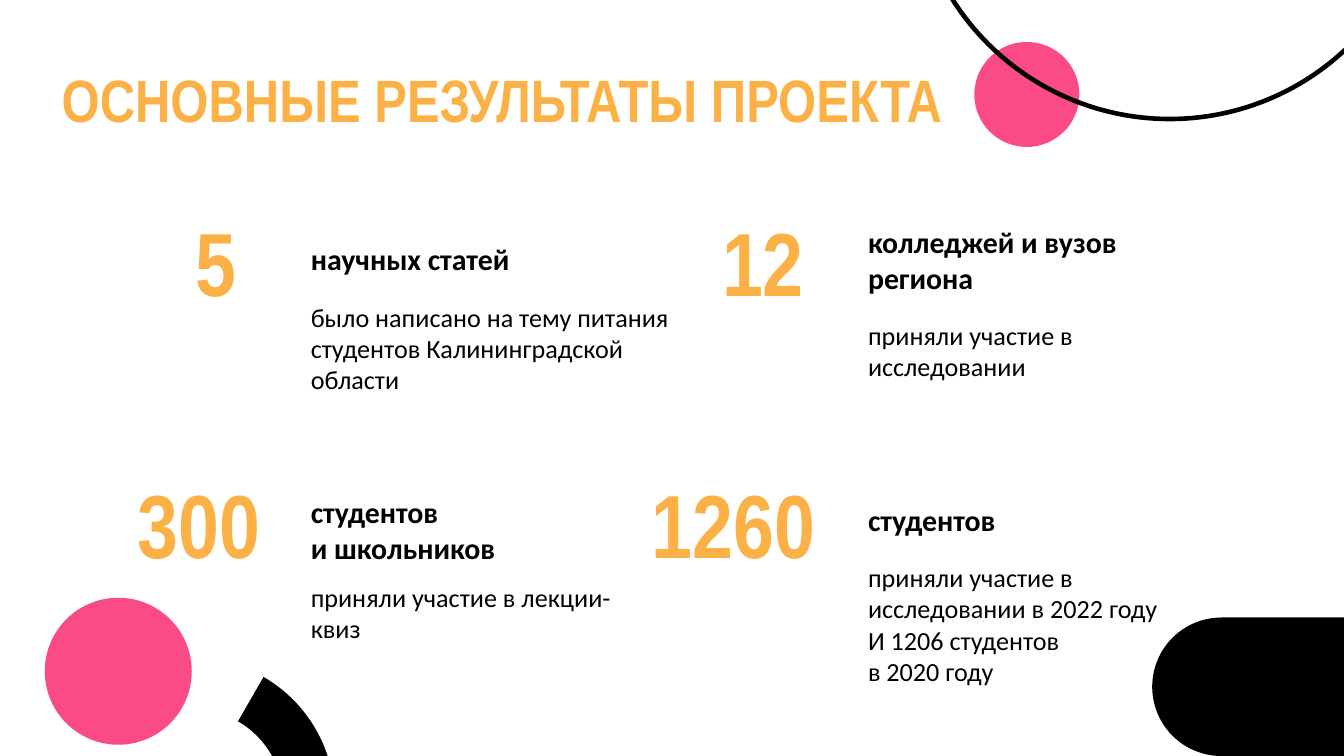
from typing import NamedTuple

from pptx import Presentation
from pptx.dml.color import RGBColor
from pptx.enum.shapes import MSO_SHAPE
from pptx.enum.text import MSO_ANCHOR, MSO_AUTO_SIZE, PP_ALIGN
from pptx.util import Emu, Pt

EMU_PER_PX = 9525
COLORS = {"orange": "FBB146", "pink": "FA4B84", "black": "000000"}
INSET = 10
NUMBER_HEIGHT = 103
HEADING_WIDTH = 260


class Box(NamedTuple):
    left: int
    top: int
    width: int
    height: int


class TextStyle(NamedTuple):
    font: str
    size: int
    color: str
    bold: bool = True
    align: PP_ALIGN = PP_ALIGN.LEFT
    anchor: MSO_ANCHOR = MSO_ANCHOR.TOP


class Column(NamedTuple):
    number_right: int
    text_left: int


class Result(NamedTuple):
    column: Column
    number_top: int
    number_width: int
    number: str
    heading_top: int
    heading_height: int
    heading: str
    detail_top: int
    detail_width: int
    detail_height: int
    detail: str


TITLE = TextStyle("Arial Narrow", 32, "orange")
NUMBER = TextStyle("Arial Narrow", 48, "orange", align=PP_ALIGN.CENTER,
                   anchor=MSO_ANCHOR.MIDDLE)
HEADING = TextStyle("Calibri", 16, "black")
DETAIL = TextStyle("Calibri", 14, "black", bold=False)

LEFT, RIGHT = Column(211, 212), Column(602, 610)
UPPER, LOWER = 135, 322
RESULTS = [
    Result(LEFT, UPPER, 114, "5", 162, 47, "научных статей", 205, 276, 84,
           "было написано на тему питания студентов Калининградской области"),
    Result(RIGHT, UPPER, 114, "12", 150, 67, "колледжей и вузов региона",
           218, 276, 64, "приняли участие в исследовании"),
    Result(LEFT, LOWER, 138, "300", 343, 47, "студентов\nи школьников",
           405, 245, 64, "приняли участие в лекции-квиз"),
    Result(RIGHT, LOWER, 156, "1260", 348, 67, "студентов", 391, 276, 93,
           "приняли участие в исследовании в 2022 году\n"
           "И 1206 студентов\nв 2020 году"),
]


def px(value: int) -> Emu:
    return Emu(value * EMU_PER_PX)


def emu_box(box: Box) -> list[Emu]:
    return [px(value) for value in box]


def color(name: str) -> RGBColor:
    return RGBColor.from_string(COLORS[name])


def add_filled(slide, kind: MSO_SHAPE, box: Box, fill: str, adjustments=()):
    shape = slide.shapes.add_shape(kind, *emu_box(box))
    shape.shadow.inherit = False
    shape.fill.solid()
    shape.fill.fore_color.rgb = color(fill)
    shape.line.fill.background()
    for index, value in enumerate(adjustments):
        shape.adjustments[index] = value
    return shape


def write_text(shape, text: str, style: TextStyle) -> None:
    frame = shape.text_frame
    frame.text = text
    frame.word_wrap = True
    frame.auto_size = MSO_AUTO_SIZE.NONE
    frame.vertical_anchor = style.anchor
    frame.margin_left = frame.margin_right = px(INSET)
    frame.margin_top = frame.margin_bottom = px(INSET)
    for paragraph in frame.paragraphs:
        paragraph.alignment = style.align
        paragraph.font.name = style.font
        paragraph.font.size = Pt(style.size)
        paragraph.font.bold = style.bold
        paragraph.font.color.rgb = color(style.color)


def add_text(slide, box: Box, text: str, style: TextStyle) -> None:
    write_text(slide.shapes.add_textbox(*emu_box(box)), text, style)


def add_decoration(slide) -> None:
    tab = add_filled(slide, MSO_SHAPE.ROUND_2_SAME_RECTANGLE,
                     Box(842, 422, 99, 137), "black", (0.5, 0))
    tab.rotation = 270
    add_filled(slide, MSO_SHAPE.OVAL, Box(32, 427, 105, 105), "pink")
    add_filled(slide, MSO_SHAPE.BLOCK_ARC, Box(36, 470, 203, 203), "black",
               (180, 0, 0.18))
    add_filled(slide, MSO_SHAPE.OVAL, Box(696, 30, 75, 75), "pink")
    ring = add_filled(slide, MSO_SHAPE.OVAL, Box(652, -282, 367, 367), "black")
    ring.fill.background()
    ring.line.color.rgb = color("black")
    ring.line.width = Pt(2.46)


def add_title(slide, box: Box, text: str) -> None:
    title = slide.shapes.title
    title.left, title.top, title.width, title.height = emu_box(box)
    write_text(title, text, TITLE)


def add_result(slide, result: Result) -> None:
    number_left = result.column.number_right - result.number_width
    text_left = result.column.text_left
    add_text(slide, Box(number_left, result.number_top, result.number_width,
                        NUMBER_HEIGHT), result.number, NUMBER)
    add_text(slide, Box(text_left, result.heading_top, HEADING_WIDTH,
                        result.heading_height), result.heading, HEADING)
    add_text(slide, Box(text_left, result.detail_top, result.detail_width,
                        result.detail_height), result.detail, DETAIL)


def main() -> None:
    presentation = Presentation()
    presentation.slide_width, presentation.slide_height = px(960), px(540)
    slide = presentation.slides.add_slide(presentation.slide_layouts[5])
    add_decoration(slide)
    add_title(slide, Box(34, 35, 884, 75), "ОСНОВНЫЕ РЕЗУЛЬТАТЫ ПРОЕКТА")
    for result in RESULTS:
        add_result(slide, result)
    presentation.save("out.pptx")


if __name__ == "__main__":
    main()
